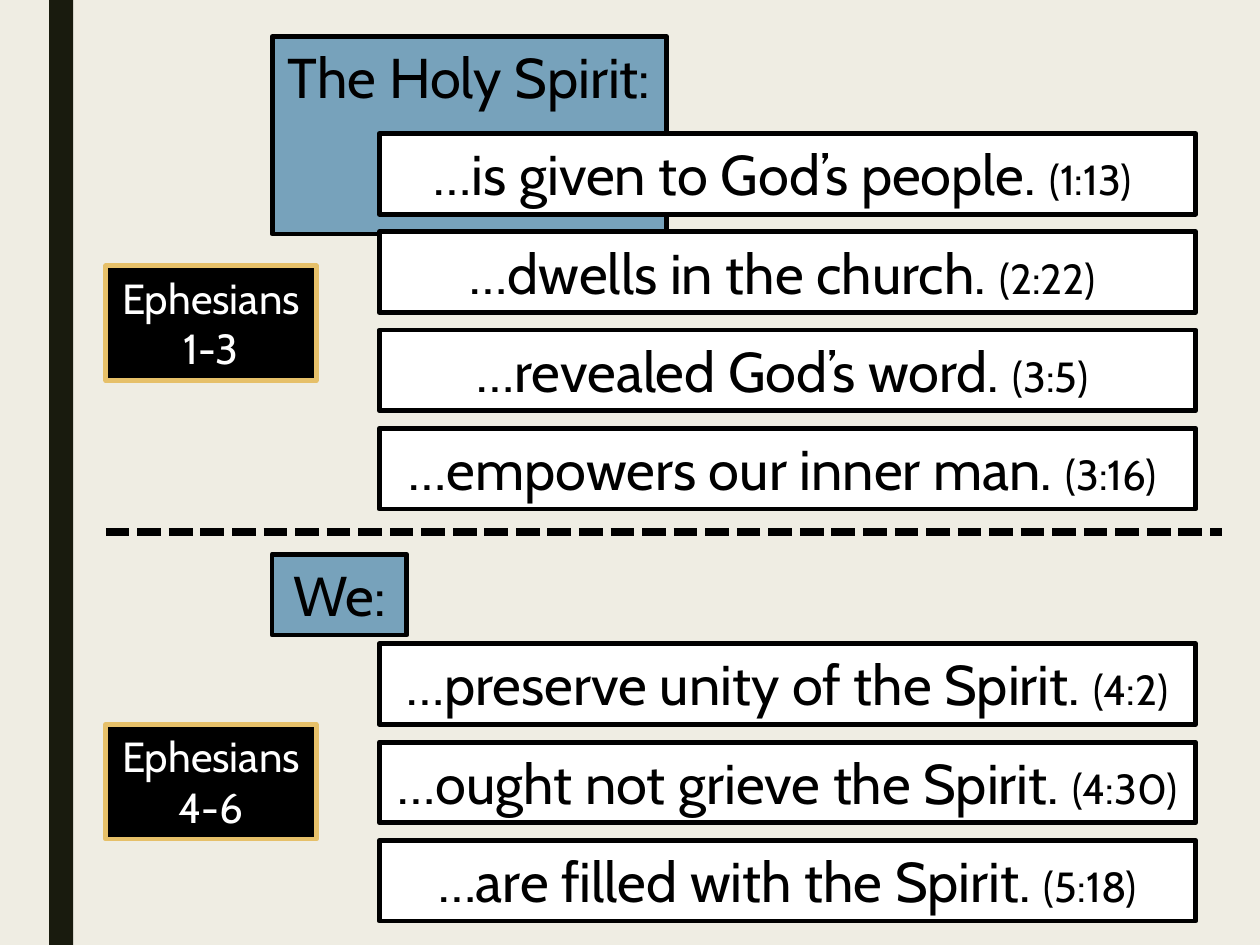
"""Build a slide on the Holy Spirit in Ephesians 1-3 and 4-6."""
from dataclasses import dataclass

from lxml import etree
from pptx import Presentation
from pptx.dml.color import RGBColor
from pptx.enum import dml, shapes, text
from pptx.oxml import ns
from pptx.util import Inches, Pt


@dataclass(frozen=True)
class Theme:
    font: str = "Cabin"
    paper: str = "EFEDE3"
    bar: str = "191B0E"
    heading: str = "77A2BB"
    gold: str = "E6C069"
    black: str = "000000"
    white: str = "FFFFFF"
    large: int = 32
    small: int = 24
    border: float = 2.75
    divider: float = 4.5


theme = Theme()


def rgb(value):
    return RGBColor.from_string(value)


def style_box(sp, box, fill, line, color, runs):
    sp.left, sp.top, sp.width, sp.height = [Inches(v) for v in box]
    sp.fill.solid()
    sp.fill.fore_color.rgb = rgb(fill)
    sp.line.color.rgb = rgb(line)
    sp.line.width = Pt(theme.border)
    tf = sp.text_frame
    tf.word_wrap = True
    tf.auto_size = text.MSO_AUTO_SIZE.SHAPE_TO_FIT_TEXT
    tf.vertical_anchor = text.MSO_ANCHOR.TOP
    p = tf.paragraphs[0]
    p.alignment = text.PP_ALIGN.CENTER
    for words, size in runs:
        r = p.add_run()
        r.text = words
        r.font.name = theme.font
        r.font.size = Pt(size)
        r.font.color.rgb = rgb(color)


prs = Presentation()
prs.slide_width, prs.slide_height = Inches(10), Inches(7.5)
s = prs.slides.add_slide(prs.slide_layouts[5])
s.background.fill.solid()
s.background.fill.fore_color.rgb = rgb(theme.paper)

RECT = shapes.MSO_SHAPE.RECTANGLE
bar = s.shapes.add_shape(RECT, Inches(0.39), 0, Inches(0.19), prs.slide_height)
bar.shadow.inherit = False
bar.fill.solid()
bar.fill.fore_color.rgb = rgb(theme.bar)
bar.line.fill.background()

groups = [
    (1.06, [
        ("…is given to God’s people. ", "(1:13) "),
        ("…dwells in the church. ", "(2:22) "),
        ("…revealed God’s word. ", "(3:5) "),
        ("…empowers our inner man. ", "(3:16) "),
    ]),
    (5.11, [
        ("…preserve unity of the Spirit. ", "(4:2)"),
        ("…ought not grieve the Spirit. ", "(4:30)"),
        ("…are filled with the Spirit. ", "(5:18)"),
    ]),
]
row_step = 0.78
for top, rows in groups:
    for i, (statement, verse) in enumerate(rows):
        sp = s.shapes.add_shape(RECT, 0, 0, 0, 0)
        sp.shadow.inherit = False
        style_box(sp, (3.01, top + i * row_step, 6.48, 0.64),
                  theme.white, theme.black, theme.black,
                  [(statement, theme.large), (verse, theme.small)])

style_box(s.shapes.title, (2.16, 0.29, 3.13, 0.64),
          theme.heading, theme.black, theme.black,
          [("The Holy Spirit:", theme.large)])

labels = [
    ("We:", (2.16, 4.4, 1.07, 0.64), theme.heading, theme.black,
     theme.black, theme.large),
    ("Ephesians 1-3", (0.84, 2.11, 1.67, 0.91), theme.black, theme.gold,
     theme.white, theme.small),
    ("Ephesians 4-6", (0.84, 5.75, 1.67, 0.91), theme.black, theme.gold,
     theme.white, theme.small),
]
for words, box, fill, line, color, size in labels:
    sp = s.shapes.add_shape(RECT, 0, 0, 0, 0)
    sp.shadow.inherit = False
    style_box(sp, box, fill, line, color, [(words, size)])

divider = s.shapes.add_connector(shapes.MSO_CONNECTOR.STRAIGHT, Inches(0.84),
                                 Inches(4.22), Inches(9.7), Inches(4.22))
divider.line.color.rgb = rgb(theme.black)
divider.line.width = Pt(theme.divider)
divider.line.dash_style = dml.MSO_LINE.SQUARE_DOT
etree.SubElement(divider.element.spPr, ns.qn("a:effectLst"))

prs.save("out.pptx")
